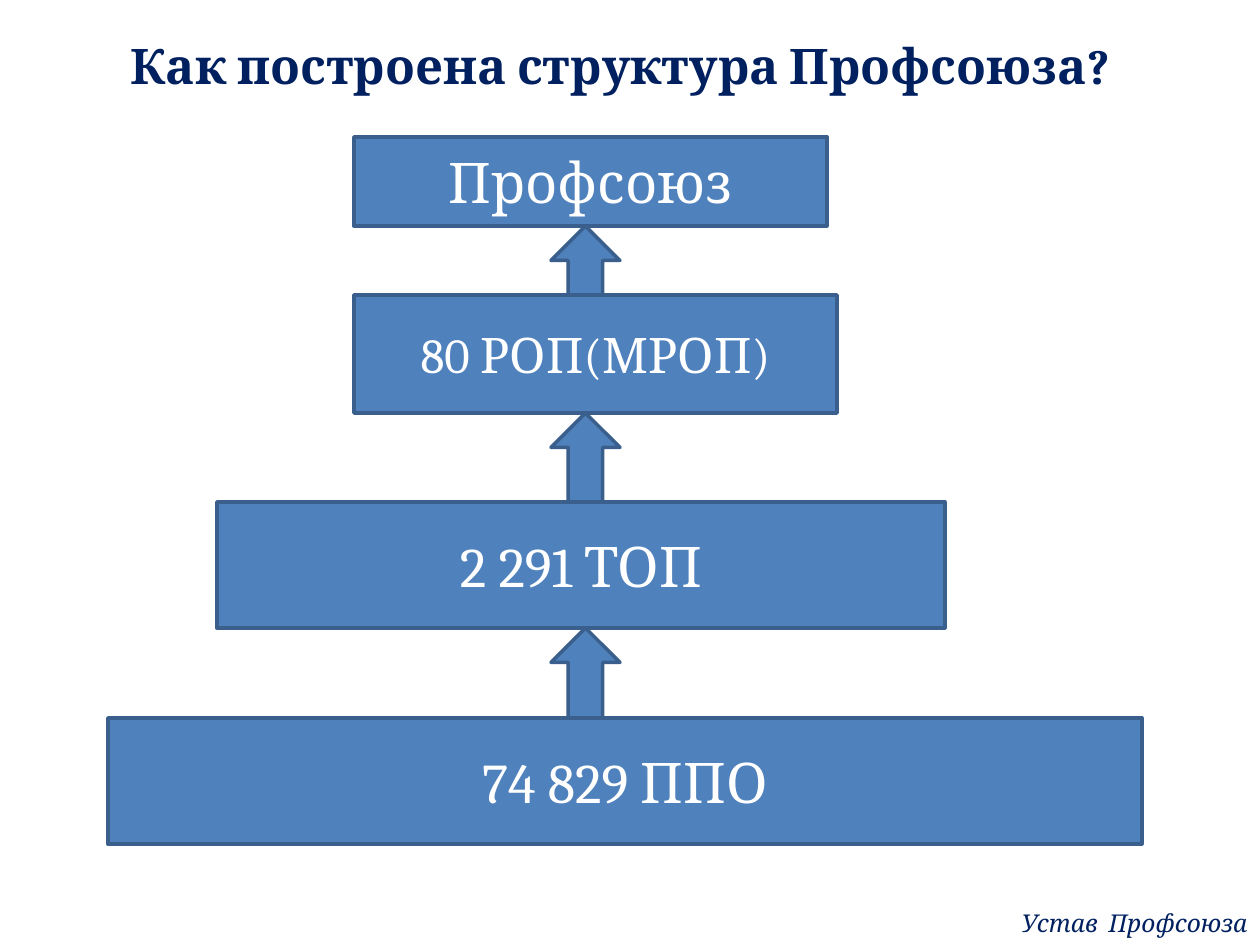
from itertools import pairwise

from pptx import Presentation
from pptx.dml.color import RGBColor
from pptx.enum.shapes import MSO_SHAPE as Shape
from pptx.enum.text import MSO_ANCHOR as Anchor, PP_ALIGN as Align
from pptx.util import Emu, Pt

PX_PER_INCH = 126
FONT = "Cambria"
NAVY = RGBColor(0x00, 0x20, 0x60)
BLUE = RGBColor(0x4F, 0x81, 0xBD)
OUTLINE = RGBColor(0x3A, 0x5F, 0x8C)
WHITE = RGBColor(0xFF, 0xFF, 0xFF)

ARROW_LEFT, ARROW_WIDTH = 551, 69
LEVELS = [
    ("Профсоюз", 32, (354, 137, 473, 89)),
    ("80 РОП(МРОП)", 28, (354, 295, 483, 118)),
    ("2 291 ТОП", 32, (217, 502, 728, 126)),
    ("74 829 ППО", 32, (108, 718, 1034, 126)),
]


def px(*lengths):
    """Turn pixel lengths into EMU."""
    return [Emu(round(length * 914400 / PX_PER_INCH)) for length in lengths]


def write(box, text, size, color, align, bold=False, italic=False):
    """Write one styled run into a box."""
    box.text_frame.word_wrap = True
    para = box.text_frame.paragraphs[0]
    para.alignment = align
    span = para.add_run()
    span.text = text
    font = span.font
    font.name, font.size = FONT, Pt(size)
    font.bold, font.italic = bold, italic
    font.color.rgb = color


def add_label(page, frame, *text, **style):
    """Add a text box without fill."""
    write(page.shapes.add_textbox(*px(*frame)), *text, **style)


def add_block(page, kind, frame):
    """Add an outlined blue shape."""
    block = page.shapes.add_shape(kind, *px(*frame))
    block.shadow.inherit = False
    block.fill.solid()
    block.fill.fore_color.rgb = BLUE
    block.line.color.rgb = OUTLINE
    block.line.width = Pt(2)
    return block


def add_level(page, text, size, frame):
    """Add one level of the structure."""
    box = add_block(page, Shape.RECTANGLE, frame)
    box.text_frame.vertical_anchor = Anchor.MIDDLE
    write(box, text, size, WHITE, Align.CENTER)


def add_arrow(page, upper, lower):
    """Fill the gap between two levels with an upward arrow."""
    top = upper[1] + upper[3]
    add_block(page, Shape.UP_ARROW, (ARROW_LEFT, top, ARROW_WIDTH, lower[1] - top))


def main():
    """Build the slide and save it."""
    deck = Presentation()
    deck.slide_width, deck.slide_height = px(1260, 945)
    page = deck.slides.add_slide(deck.slide_layouts[6])
    add_label(page, (39, 29, 1162, 72), "Как построена структура Профсоюза?",
              28, NAVY, Align.CENTER, bold=True)
    add_label(page, (738, 902, 522, 43), "Устав  Профсоюза",
              14, NAVY, Align.RIGHT, italic=True)
    for level in LEVELS:
        add_level(page, *level)
    for (*_, upper), (*_, lower) in pairwise(LEVELS):
        add_arrow(page, upper, lower)
    deck.save("out.pptx")


if __name__ == "__main__":
    main()
